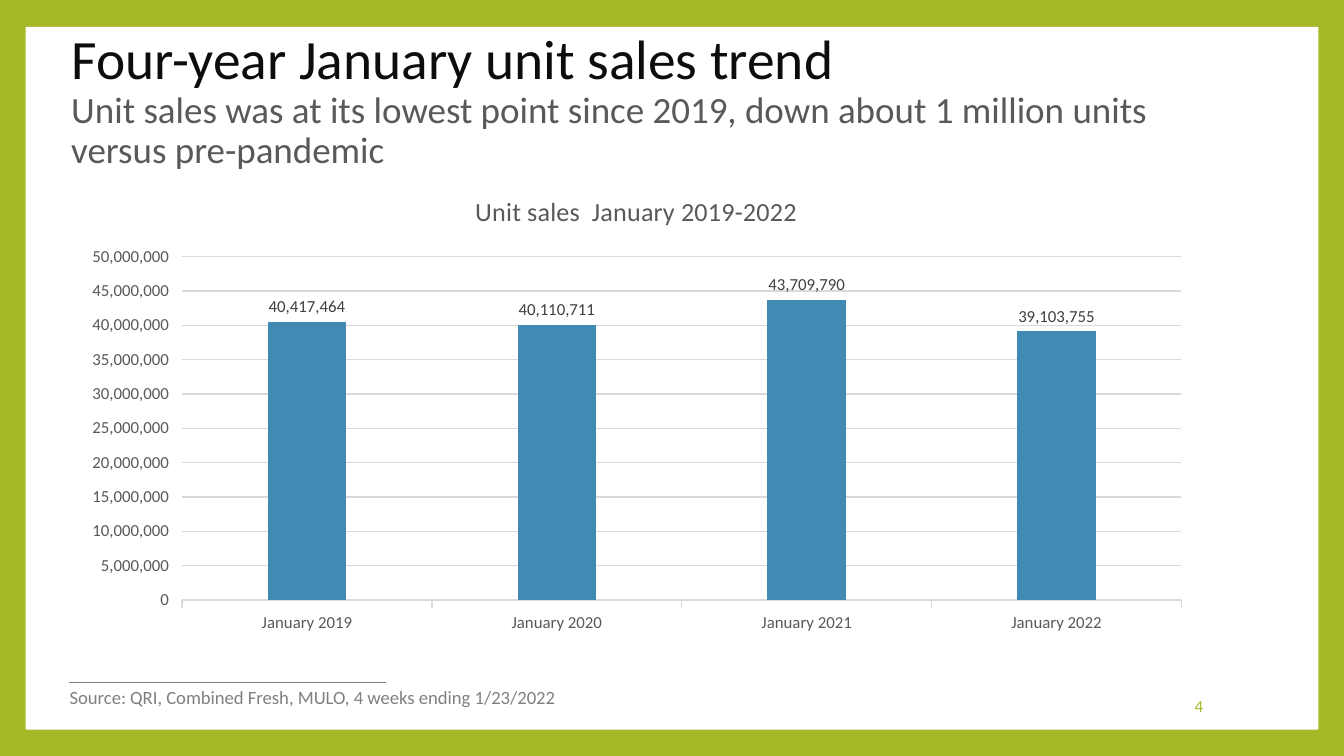
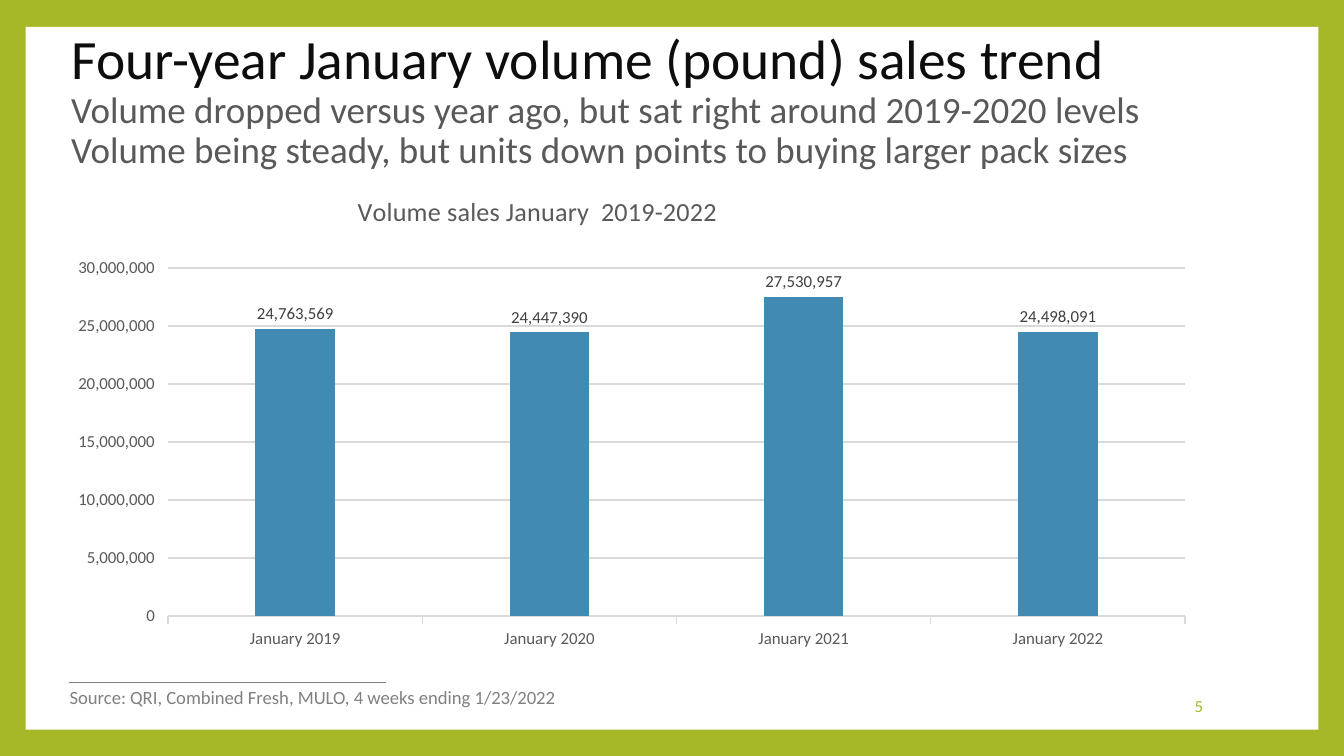
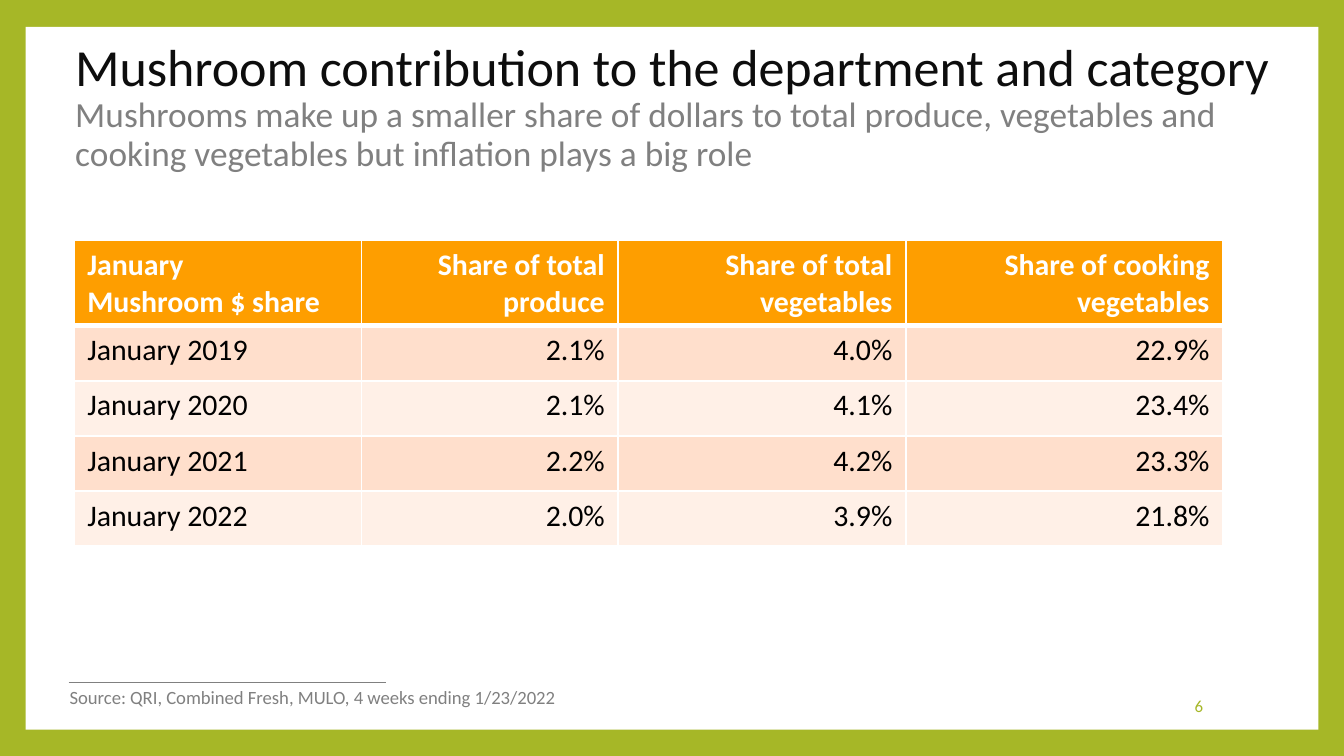
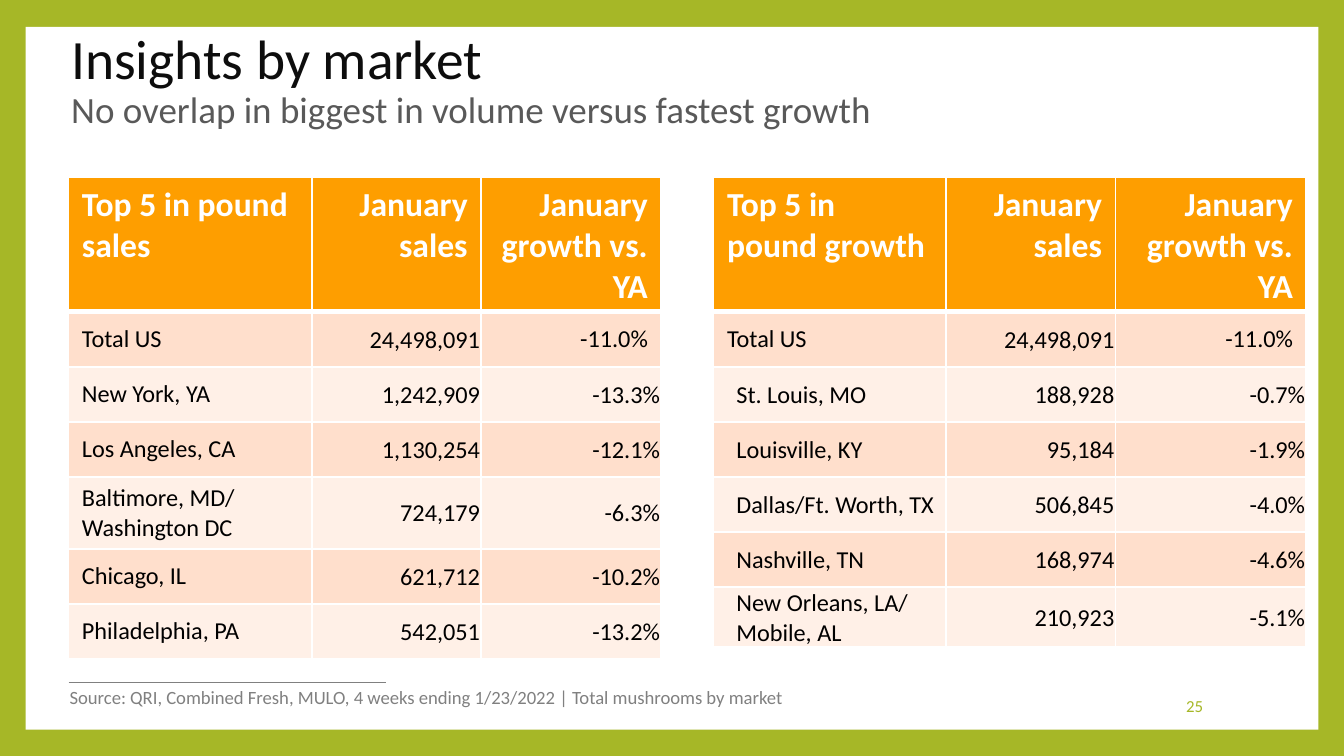
"""Build four slides on January mushroom sales: two charts and three tables."""
from lxml.etree import SubElement
from pptx import Presentation
from pptx.chart.data import CategoryChartData
from pptx.dml.color import RGBColor
from pptx.enum.chart import XL_CHART_TYPE, XL_LABEL_POSITION, XL_TICK_MARK
from pptx.enum.shapes import MSO_CONNECTOR, MSO_SHAPE
from pptx.enum.text import MSO_ANCHOR, MSO_AUTO_SIZE, PP_ALIGN
from pptx.oxml import parse_xml
from pptx.oxml.ns import nsdecls, qn
from pptx.util import Pt

PX = 9144
FONT = "Calibri"
GREEN = RGBColor(0xA6, 0xB7, 0x27)
WHITE = RGBColor(0xFF, 0xFF, 0xFF)
BLACK = RGBColor(0x00, 0x00, 0x00)
INK = RGBColor(0x0D, 0x0D, 0x0D)
DARK = RGBColor(0x40, 0x40, 0x40)
SLATE = RGBColor(0x59, 0x59, 0x59)
GRAY = RGBColor(0x80, 0x80, 0x80)
GRID = RGBColor(0xD9, 0xD9, 0xD9)
BLUE = RGBColor(0x41, 0x8A, 0xB3)
ORANGE = RGBColor(0xFE, 0x9E, 0x00)
PEACH = RGBColor(0xFF, 0xDF, 0xCC)
CREAM = RGBColor(0xFF, 0xF0, 0xE7)

SOURCE = "Source: QRI, Combined Fresh, MULO, 4 weeks ending 1/23/2022"
MONTHS = [f"January {year}" for year in range(2019, 2023)]


def write(p, text, size, color, bold=False):
    """Add text to a paragraph, one run per line."""
    for i, line in enumerate(text.split("\n")):
        if i:
            p.add_line_break()
        r = p.add_run()
        r.text = line
        r.font.name, r.font.size, r.font.bold = FONT, Pt(size), bold
        r.font.color.rgb = color


def add_table(s, left, top, height, widths, rows, head_size, size, market=False, indent=0):
    """Add a banded table; market tables have tight number cells."""
    frame = s.shapes.add_table(len(rows), len(widths), left * PX, top * PX,
                               sum(widths) * PX, height * PX)
    tbl = frame.table
    tbl.horz_banding = False
    for col, width in zip(tbl.columns, widths):
        col.width = width * PX
    for i, row in enumerate(rows):
        tbl.rows[i].height = 41 * PX
        for j, text in enumerate(row):
            cell = tbl.cell(i, j)
            cell.fill.solid()
            cell.fill.fore_color.rgb = ORANGE if i == 0 else PEACH if i % 2 else CREAM
            p = cell.text_frame.paragraphs[0]
            p.alignment = PP_ALIGN.RIGHT if j else PP_ALIGN.LEFT
            write(p, text, size if i else head_size, BLACK if i else WHITE, i == 0)
            if market and i:
                cell.vertical_anchor = MSO_ANCHOR.MIDDLE
                if j == 1 or i > 1 and (j == 2 or indent):
                    cell.margin_left = (1 if j else indent) * PX
                    cell.margin_right = cell.margin_top = PX
                    cell.margin_bottom = 0
            for k, side in enumerate("LRTB"):
                thick = (i, side) in ((0, "B"), (1, "T"))
                cell._tc.get_or_add_tcPr().insert(k, parse_xml(
                    f'<a:ln{side} {nsdecls("a")} w="{Pt(3 if thick else 1)}"><a:solidFill>'
                    f'<a:srgbClr val="{WHITE}"/></a:solidFill></a:ln{side}>'))
    frame.height = height * PX


prs = Presentation()
prs.slide_width = 1000 * PX
prs.slide_height = prs.slide_width * 9 // 16
layout = prs.slide_layouts[5]
layout.background.fill.solid()
layout.background.fill.fore_color.rgb = GREEN
for ph in list(layout.placeholders):
    if ph.placeholder_format.idx >= 10:
        ph.element.getparent().remove(ph.element)

pages = [
    (4, (43, 36, 853, 79), 29.7, 19.8, SLATE, "Four-year January unit sales trend",
     "Unit sales was at its lowest point since 2019, down about 1 million units versus pre-pandemic",
     SOURCE, 384),
    (5, (43, 36, 853, 79), 29.7, 19.8, SLATE, "Four-year January volume (pound) sales trend",
     "Volume dropped versus year ago, but sat right around 2019-2020 levels\n"
     "Volume being steady, but units down points to buying larger pack sizes",
     SOURCE, 384),
    (6, (46, 53, 958, 54), 27.9, 18.9, GRAY, "Mushroom contribution to the department and category",
     "Mushrooms make up a smaller share of dollars to total produce, vegetables and "
     "cooking vegetables but inflation plays a big role",
     SOURCE, 384),
    (25, (43, 21, 853, 79), 29.7, 19.8, SLATE, "Insights by market",
     "No overlap in biggest in volume versus fastest growth",
     SOURCE + " | Total mushrooms by market", 694),
]
for number, box, size, sub_size, sub_color, title, subtitle, source, source_width in pages:
    s = prs.slides.add_slide(layout)
    sp = s.shapes.title
    sp.left, sp.top, sp.width, sp.height = [v * PX for v in box]
    tf = sp.text_frame
    tf.word_wrap, tf.auto_size = True, MSO_AUTO_SIZE.NONE
    tf.vertical_anchor = MSO_ANCHOR.MIDDLE
    p = tf.paragraphs[0]
    p.alignment, p.line_spacing = PP_ALIGN.LEFT, 0.9
    write(p, title, size, INK)
    p.add_line_break()
    write(p, subtitle, sub_size, sub_color)
    for text, left, top, width, height, size, color, align in (
            (str(number), 765, 510, 140, 30, 9, GREEN, PP_ALIGN.RIGHT),
            (source, 42, 505, source_width, 27, 10, GRAY, PP_ALIGN.LEFT)):
        tf = s.shapes.add_textbox(left * PX, top * PX, width * PX, height * PX).text_frame
        tf.word_wrap = True
        tf.vertical_anchor = MSO_ANCHOR.MIDDLE
        tf.paragraphs[0].alignment = align
        write(tf.paragraphs[0], text, size, color)

s = prs.slides[0]
panel = s.shapes.add_shape(MSO_SHAPE.RECTANGLE, 19 * PX, 20 * PX, 962 * PX, 523 * PX)
panel.shadow.inherit = False
panel.fill.solid()
panel.fill.fore_color.rgb = WHITE
panel.line.fill.background()
rule = s.shapes.add_connector(MSO_CONNECTOR.STRAIGHT, 51 * PX, 508 * PX, 287 * PX, 508 * PX)
rule.line.color.rgb, rule.line.width = GRAY, Pt(0.79)
SubElement(rule._element.spPr, qn("a:effectLst"))
for i, sp in enumerate((panel, rule)):
    layout.shapes._spTree.insert(2 + i, sp._element)

charts = [
    ((51, 128, 845, 350), "Unit sales  January 2019-2022", None, 0.18, 50000000,
     (40417464, 40110711, 43709790, 39103755)),
    ((39, 140, 860, 350), "Volume sales January  2019-2022", (0.26, 0), 0.17, 30000000,
     (24763569, 24447390, 27530957, 24498091)),
]
for s, (box, title, title_at, plot_top, top_value, values) in zip(prs.slides, charts):
    data = CategoryChartData(number_format="#,##0")
    data.categories = MONTHS
    data.add_series("Series 1", values)
    chart = s.shapes.add_chart(XL_CHART_TYPE.COLUMN_CLUSTERED, *[v * PX for v in box], data).chart
    chart.font.name, chart.font.size = FONT, Pt(10)
    chart.has_legend = False
    write(chart.chart_title.text_frame.paragraphs[0], title, 14, SLATE)
    chart.chart_title.include_in_layout = False

    plot = chart.plots[0]
    plot.gap_width, plot.overlap, plot.vary_by_categories = 219, -27, False
    plot.series[0].format.fill.solid()
    plot.series[0].format.fill.fore_color.rgb = BLUE
    plot.has_data_labels = True
    labels = plot.data_labels
    labels.show_value, labels.position = True, XL_LABEL_POSITION.OUTSIDE_END
    labels.number_format, labels.number_format_is_linked = "#,##0", False

    cat, val = chart.category_axis, chart.value_axis
    for font, color in ((labels.font, DARK), (cat.tick_labels.font, SLATE), (val.tick_labels.font, SLATE)):
        font.name, font.size, font.color.rgb = FONT, Pt(9), color
    cat.major_tick_mark = val.major_tick_mark = XL_TICK_MARK.OUTSIDE
    val.minimum_scale, val.maximum_scale, val.major_unit = 0, top_value, 5000000
    val.tick_labels.number_format, val.tick_labels.number_format_is_linked = "#,##0", False
    val.format.line.fill.background()
    for line in (cat.format.line, val.major_gridlines.format.line):
        line.color.rgb, line.width = GRID, Pt(0.75)

    layouts = [(chart._chartSpace.chart.plotArea, 0, [
        ("layoutTarget", "inner"), ("xMode", "edge"), ("yMode", "edge"), ("x", 0.1),
        ("y", plot_top), ("w", 0.88), ("h", round(0.91 - plot_top, 2))])]
    if title_at:
        layouts.append((chart.chart_title._element, 1, [
            ("xMode", "edge"), ("yMode", "edge"), ("x", title_at[0]), ("y", title_at[1])]))
    for parent, index, settings in layouts:
        for old in parent.findall(qn("c:layout")):
            parent.remove(old)
        parts = "".join(f'<c:{name} val="{value}"/>' for name, value in settings)
        parent.insert(index, parse_xml(
            f'<c:layout {nsdecls("c")}><c:manualLayout>{parts}</c:manualLayout></c:layout>'))

shares = [("2.1%", "4.0%", "22.9%"), ("2.1%", "4.1%", "23.4%"),
          ("2.2%", "4.2%", "23.3%"), ("2.0%", "3.9%", "21.8%")]
add_table(prs.slides[2], 55, 179, 226, (214, 191, 214, 236), [
    ("January\nMushroom $ share", "Share of total produce", "Share of total vegetables",
     "Share of cooking vegetables"),
    *[(month, *row) for month, row in zip(MONTHS, shares)]], 16, 16)

market_head = ("January sales", "January growth vs. YA")
total = ("Total US", "24,498,091", "-11.0%")
add_table(prs.slides[3], 51, 132, 311, (181, 126, 134), [
    ("Top 5 in pound sales", *market_head),
    total,
    ("New York, YA", "1,242,909", "-13.3%"),
    ("Los Angeles, CA", "1,130,254", "-12.1%"),
    ("Baltimore, MD/ Washington DC", "724,179", "-6.3%"),
    ("Chicago, IL", "621,712", "-10.2%"),
    ("Philadelphia, PA", "542,051", "-13.2%")], 18, 13, market=True)
add_table(prs.slides[3], 531, 132, 302, (173, 126, 142), [
    ("Top 5 in pound growth", *market_head),
    total,
    ("St. Louis, MO", "188,928", "-0.7%"),
    ("Louisville, KY", "95,184", "-1.9%"),
    ("Dallas/Ft. Worth, TX", "506,845", "-4.0%"),
    ("Nashville, TN", "168,974", "-4.6%"),
    ("New Orleans, LA/ Mobile, AL", "210,923", "-5.1%")], 18, 13, market=True, indent=17)

prs.save("out.pptx")
